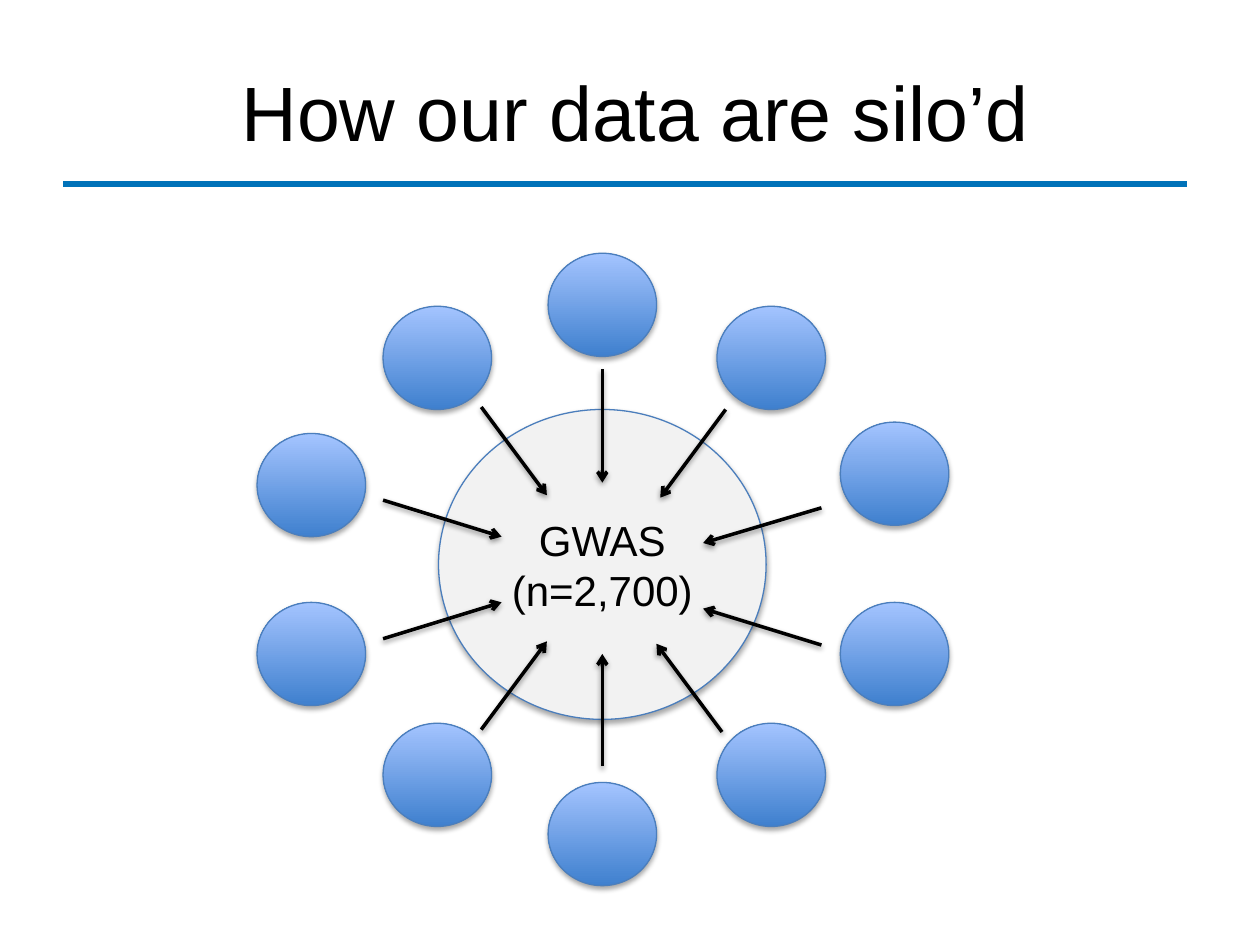
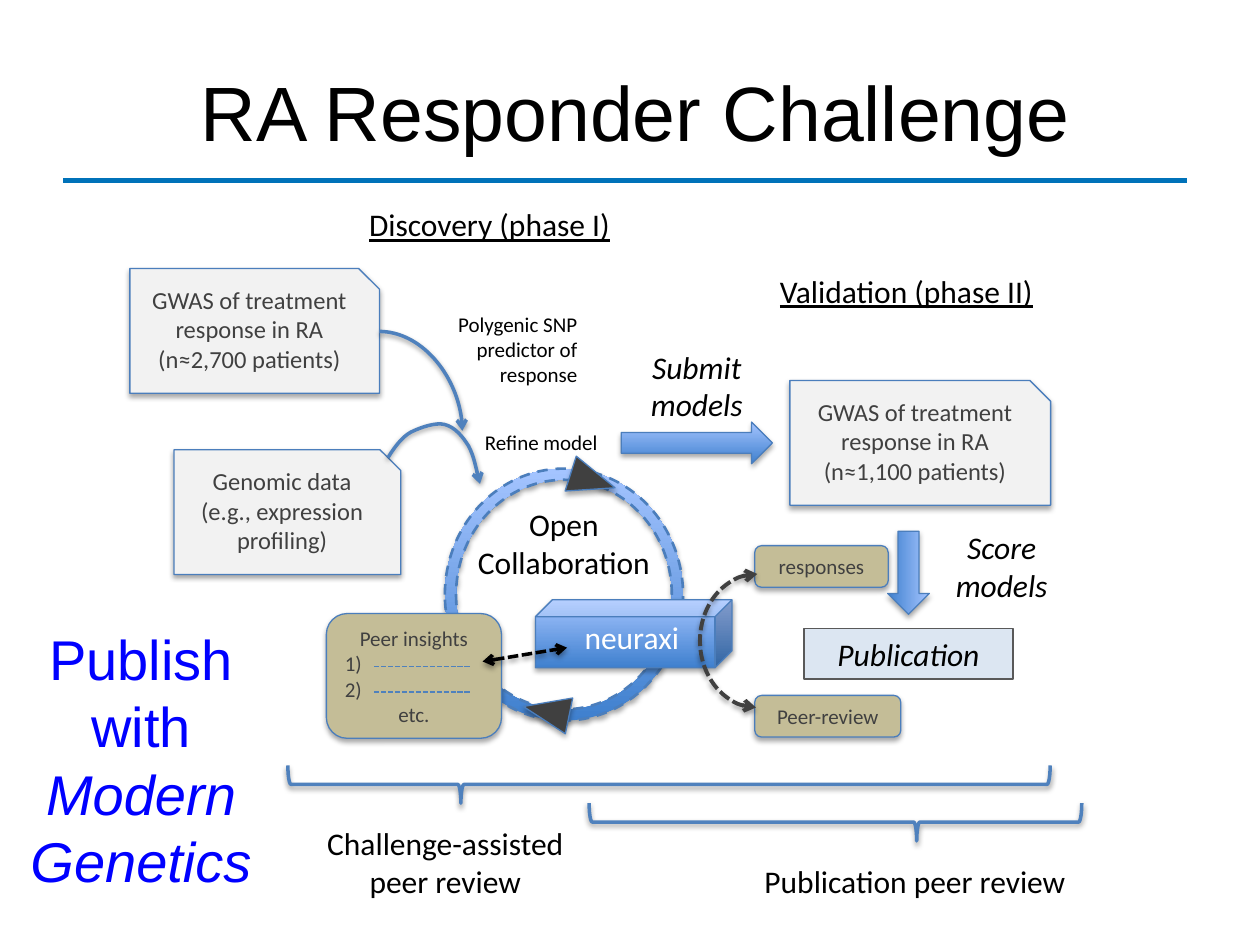
from lxml import etree
from pptx import Presentation
from pptx.dml.color import RGBColor
from pptx.enum import dml, shapes, text
from pptx.oxml.ns import qn
from pptx.util import Pt

# Shared colours
BLACK = RGBColor(0x00, 0x00, 0x00)
WHITE = RGBColor(0xFF, 0xFF, 0xFF)
RULE_BLUE = RGBColor(0x00, 0x72, 0xB9)
EDGE_BLUE = RGBColor(0x4B, 0x7E, 0xBC)
FLOW_BLUE = RGBColor(0x4F, 0x81, 0xBD)
DEEP_BLUE = RGBColor(0x3F, 0x80, 0xCE)
LIGHT_BLUE = RGBColor(0xA4, 0xC4, 0xFF)
PALE_BLUE = RGBColor(0xDC, 0xE6, 0xF2)
CALL_BLUE = RGBColor(0x00, 0x00, 0xFF)
PALE_GREY = RGBColor(0xF2, 0xF2, 0xF2)
DARK_GREY = RGBColor(0x40, 0x40, 0x40)
MID_GREY = RGBColor(0x59, 0x59, 0x59)
TAN = RGBColor(0xC4, 0xBD, 0x97)
GRADIENT = (DEEP_BLUE, LIGHT_BLUE)

SHAPE = shapes.MSO_SHAPE
CONNECTOR = shapes.MSO_CONNECTOR
DASH = dml.MSO_LINE
LEFT, CENTER, RIGHT = (text.PP_ALIGN.LEFT, text.PP_ALIGN.CENTER,
                       text.PP_ALIGN.RIGHT)
TOP, MIDDLE = text.MSO_ANCHOR.TOP, text.MSO_ANCHOR.MIDDLE

CARD_H = 71.3
TWO_LINES = 51.1
ONE_LINE = 28.8
BAR_H = 23.8


def points(values):
    return [Pt(value) for value in values]


# Line, shadow and text formatting
def style_line(item, color, width, dash=None, head=False, tail=False):
    item.line.color.rgb = color
    item.line.width = Pt(width)
    if dash:
        item.line.dash_style = dash
    outline = item._element.spPr.find(qn("a:ln"))
    for tag, wanted in (("a:headEnd", head), ("a:tailEnd", tail)):
        if wanted:
            etree.SubElement(outline, qn(tag), type="arrow")


def set_shadow(item, alpha=None, distance=0):
    """Add a soft downward shadow, or none when alpha is not given."""
    effects = etree.SubElement(item._element.spPr, qn("a:effectLst"))
    if alpha:
        shadow = etree.SubElement(
            effects, qn("a:outerShdw"), blurRad=str(Pt(3.1)),
            dist=str(Pt(distance)), dir="5400000", rotWithShape="0")
        color = etree.SubElement(shadow, qn("a:srgbClr"), val=str(BLACK))
        etree.SubElement(color, qn("a:alpha"), val=str(alpha * 1000))


def shade_shape(item):
    set_shadow(item, 35, 1.8)


def shade_line(item):
    set_shadow(item, 38, 1.6)


def write(frame, lines, size, color=BLACK, font="Calibri", align=CENTER,
          italic=None, underline=None):
    frame.text = "\n".join(lines)
    for paragraph in frame.paragraphs:
        paragraph.alignment = align
        paragraph.font.size = Pt(size)
        paragraph.font.name = font
        paragraph.font.color.rgb = color
        paragraph.font.italic = italic
        paragraph.font.underline = underline


# Element kinds
def start_slide(prs, title, rule_y):
    slide = prs.slides.add_slide(prs.slide_layouts[5])
    heading = slide.shapes.title
    heading.left, heading.top, heading.width, heading.height = points(
        (30.2, 18, 666, 90))
    heading.text_frame.vertical_anchor = MIDDLE
    write(heading.text_frame, [title], 44, font="Arial")
    rule = add_line(slide, (36, rule_y), (678.2, rule_y), RULE_BLUE, 3)
    set_shadow(rule)
    return slide


def add_line(slide, start, end, color, width, kind=CONNECTOR.STRAIGHT, **ends):
    line = slide.shapes.add_connector(kind, *points(start + end))
    style_line(line, color, width, **ends)
    return line


def add_arrow(slide, start, end, color=BLACK, **options):
    arrow = add_line(slide, start, end, color, 2, tail=True, **options)
    shade_line(arrow)
    return arrow


def add_figure(slide, kind, box, fill, edge=EDGE_BLUE, width=0.75, dash=None,
               rotation=0):
    figure = slide.shapes.add_shape(kind, *points(box))
    figure.rotation = rotation
    if fill == GRADIENT:
        figure.fill.gradient()
        figure.fill.gradient_angle = 90
        for stop, color in zip(figure.fill.gradient_stops, GRADIENT):
            stop.color.rgb = color
    else:
        figure.fill.solid()
        figure.fill.fore_color.rgb = fill
    style_line(figure, edge, width, dash)
    return figure


def add_solid(slide, kind, box, fill=GRADIENT, **options):
    solid = add_figure(slide, kind, box, fill, **options)
    shade_shape(solid)
    return solid


def add_outline(slide, kind, box, adjustments, color, width, **ends):
    outline = slide.shapes.add_shape(kind, *points(box))
    outline.rotation = 270
    for index, value in enumerate(adjustments):
        outline.adjustments[index] = value
    outline.fill.background()
    style_line(outline, color, width, **ends)
    shade_line(outline)


def add_card(slide, kind, box, lines, size, fill, anchor=TOP):
    card = add_solid(slide, kind, box, fill)
    card.text_frame.vertical_anchor = anchor
    write(card.text_frame, lines, size, DARK_GREY)
    return card


def add_label(slide, box, lines, size=18, wrap=True, **style):
    label = slide.shapes.add_textbox(*points(box))
    label.text_frame.word_wrap = wrap
    write(label.text_frame, lines, size, **style)
    return label


def add_curve(slide, start, controls):
    """Draw cubic curves; every three control points make one segment."""
    builder = slide.shapes.build_freeform(*points(start), scale=1.0)
    builder.add_line_segments([points(p) for p in controls], close=False)
    curve = builder.convert_to_shape()
    curve.fill.background()
    path = next(curve._element.iter(qn("a:path")))
    steps = path.findall(qn("a:lnTo"))
    for first in range(0, len(steps), 3):
        segment = etree.SubElement(path, qn("a:cubicBezTo"))
        for step in steps[first:first + 3]:
            segment.append(step[0])
            path.remove(step)
    style_line(curve, FLOW_BLUE, 2, tail=True)
    shade_line(curve)


# Slide 1
def build_silos(prs):
    slide = start_slide(prs, "How our data are silo’d", 105.1)
    hub = add_solid(slide, SHAPE.OVAL, (250.6, 234, 187.2, 177.1), PALE_GREY)
    write(hub.text_frame, ["GWAS", "(n=2,700)"], 24, font="Arial")

    silo_columns = {146.9: (247.7, 344.2), 218.9: (175, 413.3),
                    313.2: (144.7, 447.1), 409.7: (175, 413.3),
                    480.2: (241.2, 344.2)}
    for left, tops in silo_columns.items():
        for top in tops:
            add_solid(slide, SHAPE.OVAL, (left, top, 62, 59))

    inflows = [((344.2, 211), (344.2, 275.8)), ((414.7, 234), (377.3, 284.4)),
               ((275, 416.9), (312.5, 366.5)),
               ((412.6, 418.3), (375.1, 367.9)),
               ((275, 232.6), (312.5, 283)), ((344.2, 437.8), (344.2, 373.7)),
               ((218.9, 285.8), (286.6, 306.7)),
               ((218.9, 365), (286.6, 344.2)),
               ((469.4, 290.2), (401.8, 310.3)),
               ((469.4, 368.6), (401.8, 347.8))]
    for start, end in inflows:
        add_arrow(slide, start, end)


# Slide 2
def build_challenge(prs):
    slide = start_slide(prs, "RA Responder Challenge", 103)
    for box, phase in (((203.8, 113.8, 154.1, ONE_LINE), "Discovery (phase I)"),
                       ((438.5, 151.9, 162, ONE_LINE),
                        "Validation (phase II)")):
        add_label(slide, box, [phase], wrap=False, align=LEFT, underline=True)

    # Data sources
    study = "GWAS of treatment response in RA"
    sources = [((74.2, 153.4, 142.6, CARD_H), [study, "(n≈2,700 patients)"]),
               ((99.4, 257, 129.6, CARD_H),
                ["Genomic data", "(e.g., expression profiling)"]),
               ((451.4, 217.4, 149, CARD_H), [study, "(n≈1,100 patients)"])]
    for box, lines in sources:
        add_card(slide, SHAPE.SNIP_1_RECTANGLE, box, lines, 14, PALE_GREY)
    gwas_flow = add_arrow(slide, (216.7, 189.4), (264.2, 246.2), FLOW_BLUE,
                          kind=CONNECTOR.CURVE)
    gwas_flow._element.spPr.find(qn("a:prstGeom")).set(
        "prst", "curvedConnector2")
    add_curve(slide, (221.8, 261.4), [
        (225.4, 255.6), (229.7, 249.8), (234.7, 247),
        (240.5, 244.1), (249.1, 241.2), (254.2, 242.6),
        (259.9, 244.1), (264.2, 249.1), (267.8, 254.9),
        (270.7, 260.6), (274.3, 276.5), (274.3, 276.5)])
    add_label(slide, (236.2, 174.2, 100.8, TWO_LINES),
              ["Polygenic SNP", "predictor of response"], 12, align=RIGHT)
    add_label(slide, (270, 241.9, 79.9, 21.6), ["Refine model"], 12,
              wrap=False, align=LEFT)

    # Collaboration cycle
    cycle = add_solid(slide, SHAPE.DONUT, (254.2, 267.8, 136.1, 144),
                      width=1.5, dash=DASH.DASH)
    cycle.adjustments[0] = 0.047
    for left, top, turn in ((328.3, 261.4, 107.8), (301.7, 393.1, 281.7)):
        add_solid(slide, SHAPE.ISOSCELES_TRIANGLE, (left, top, 20.9, 26.6),
                  DARK_GREY, rotation=turn)
    add_label(slide, (259.2, 285.1, 126, TWO_LINES), ["Open Collaboration"])

    # Peer insights
    insights = add_card(slide, SHAPE.ROUNDED_RECTANGLE,
                        (186.5, 350.6, 100.1, CARD_H),
                        ["Peer insights", "1)", "2)", "etc."], 12, TAN)
    for item in insights.text_frame.paragraphs[1:3]:
        item.alignment = LEFT
    for y in (380.9, 395.3):
        set_shadow(add_line(slide, (213.8, y), (268.6, y), FLOW_BLUE, 1,
                            dash=DASH.SQUARE_DOT))

    # Submitting and scoring
    add_solid(slide, SHAPE.RIGHT_ARROW, (355, 241.2, 86.4, BAR_H))
    add_solid(slide, SHAPE.RIGHT_ARROW, (495.4, 315.4, 47.5, BAR_H),
              rotation=90)
    add_label(slide, (345.6, 195.1, 105.1, TWO_LINES), ["Submit models"],
              italic=True)
    add_label(slide, (532.8, 298.1, 79.2, TWO_LINES), ["Score models"],
              italic=True)

    # Review stages
    for box, tip in (((371.5, 230.4, 21.6, 435.6), 0.227),
                     ((466.6, 329, 21.6, 281.5), 0.665)):
        add_outline(slide, SHAPE.LEFT_BRACE, box, (0.083, tip), FLOW_BLUE, 2)
    add_label(slide, (162, 467.3, 185, TWO_LINES),
              ["Challenge-assisted peer review"])
    add_label(slide, (429.8, 488.9, 189.4, ONE_LINE),
              ["Publication peer review"], wrap=False, align=LEFT)

    # Platform and its exchanges
    add_solid(slide, SHAPE.CUBE, (306, 342.7, 112.3, 38.9))
    add_label(slide, (324, 349.9, 74.2, ONE_LINE), ["neuraxi"], wrap=False,
              color=WHITE)
    for top, width, name in ((397.4, 83.5, "Peer-review"),
                             (311.8, 76.3, "responses")):
        add_card(slide, SHAPE.ROUNDED_RECTANGLE, (431.3, top, width, BAR_H),
                 [name], 12, TAN, MIDDLE)
    add_outline(slide, SHAPE.ARC, (394.6, 333.4, 76.3, 65.5), (108.68, 0),
                DARK_GREY, 2.25, dash=DASH.SQUARE_DOT, head=True, tail=True)
    publication = add_figure(slide, SHAPE.RECTANGLE,
                             (459.4, 359.3, 119.5, ONE_LINE), PALE_BLUE,
                             MID_GREY)
    set_shadow(publication)
    write(publication.text_frame, ["Publication"], 18, italic=True)
    add_arrow(slide, (275.8, 378), (324, 370.1), dash=DASH.SQUARE_DOT,
              head=True)

    # Journal call-out
    journal = add_label(slide, (0.7, 388.8, 159.8, 90), ["Publish with "], 32,
                        color=CALL_BLUE, font="Arial").text_frame
    journal.vertical_anchor = MIDDLE
    journal_name = journal.paragraphs[0].add_run()
    journal_name.text = "Modern Genetics"
    journal_name.font.italic = True


def main():
    prs = Presentation()
    prs.slide_width, prs.slide_height = points((720, 540))
    build_silos(prs)
    build_challenge(prs)
    prs.save("out.pptx")


if __name__ == "__main__":
    main()
